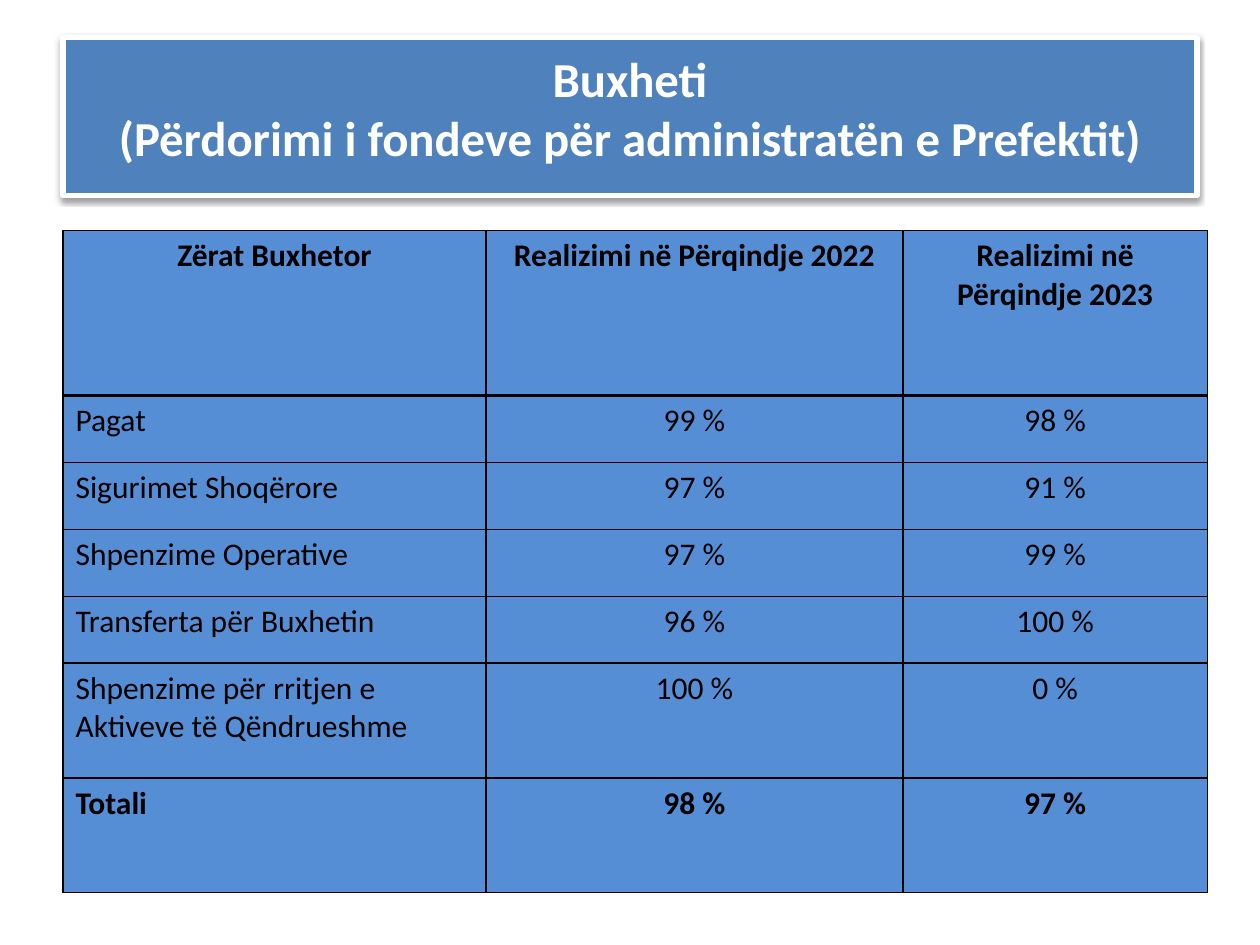
from dataclasses import dataclass

from lxml import etree
from pptx import Presentation
from pptx.dml.color import RGBColor
from pptx.enum.shapes import MSO_SHAPE
from pptx.enum.text import MSO_ANCHOR, PP_ALIGN
from pptx.oxml.ns import qn
from pptx.util import Cm, Pt

RECTANGLE = MSO_SHAPE.RECTANGLE
MIDDLE = MSO_ANCHOR.MIDDLE
LEFT, CENTER = PP_ALIGN.LEFT, PP_ALIGN.CENTER

FONT = "Calibri"
COLORS = {
    "title": "4F81BD",
    "cell": "558ED5",
    "white": "FFFFFF",
    "black": "000000",
}
TITLE_LINES = ("Buxheti", "(Përdorimi i fondeve për administratën e Prefektit)")
COLUMN_WIDTHS = (8.53, 8.4, 6.14)


@dataclass
class BudgetRow:
    item: str
    year_2022: str
    year_2023: str
    height: float = 1.35
    bold: bool = False
    header: bool = False


ROWS = [
    BudgetRow("Zërat Buxhetor", "Realizimi në Përqindje 2022",
              "Realizimi në Përqindje 2023", 3.32, True, True),
    BudgetRow("Pagat", "99 %", "98 %"),
    BudgetRow("Sigurimet Shoqërore", "97 %", "91 %"),
    BudgetRow("Shpenzime Operative", "97 %", "99 %"),
    BudgetRow("Transferta për Buxhetin", "96 %", "100 %"),
    BudgetRow("Shpenzime për rritjen e Aktiveve të Qëndrueshme", "100 %", "0 %", 2.31),
    BudgetRow("Totali", "98 %", "97 %", 2.31, True),
]


def rgb(name: str) -> RGBColor:
    return RGBColor.from_string(COLORS[name])


def format_paragraph(p, size: float, color: str, bold: bool, align) -> None:
    p.alignment = align
    for r in p.runs:
        r.font.name = FONT
        r.font.size = Pt(size)
        r.font.bold = bold
        r.font.color.rgb = rgb(color)


def add_color(parent, color: str):
    return etree.SubElement(parent, qn("a:srgbClr"), val=COLORS[color])


def add_shadow(sp) -> None:
    sp.shadow.inherit = False
    effects = sp._element.spPr.find(qn("a:effectLst"))
    shadow = etree.SubElement(
        effects, qn("a:outerShdw"), blurRad=str(Pt(3.1)), dist=str(Pt(1.6)),
        dir=str(90 * 60000), rotWithShape="0")
    etree.SubElement(add_color(shadow, "black"), qn("a:alpha"), val="38000")


def add_title(s) -> None:
    sp = s.shapes.add_shape(RECTANGLE, Cm(1.27), Cm(0.76), Cm(22.86), Cm(3.18))
    sp.fill.solid()
    sp.fill.fore_color.rgb = rgb("title")
    sp.line.color.rgb = rgb("white")
    sp.line.width = Pt(3)
    add_shadow(sp)
    tf = sp.text_frame
    tf.word_wrap = True
    tf.vertical_anchor = MIDDLE
    tf.margin_bottom = Cm(0.48)
    tf.text = "\n".join(TITLE_LINES)
    for p in tf.paragraphs:
        format_paragraph(p, 27.9, "white", True, CENTER)


def add_border(cell, side: str, width: float) -> None:
    line = etree.SubElement(cell._tc.get_or_add_tcPr(), qn(f"a:ln{side}"), w=str(Pt(width)))
    add_color(etree.SubElement(line, qn("a:solidFill")), "black")


def fill_cell(cell, text: str, row: BudgetRow, align, top: float) -> None:
    widths = {"L": 1, "R": 1, "T": top, "B": 2 if row.header else 1}
    for side, width in widths.items():
        add_border(cell, side, width)
    cell.fill.solid()
    cell.fill.fore_color.rgb = rgb("cell")
    cell.text_frame.text = text
    format_paragraph(cell.text_frame.paragraphs[0], 18, "black", row.bold, align)


def add_budget_table(s) -> None:
    table = s.shapes.add_table(
        len(ROWS), len(COLUMN_WIDTHS), Cm(1.27), Cm(4.65),
        Cm(sum(COLUMN_WIDTHS)), Cm(sum(row.height for row in ROWS))).table
    for column, width in zip(table.columns, COLUMN_WIDTHS):
        column.width = Cm(width)
    for i, row in enumerate(ROWS):
        table.rows[i].height = Cm(row.height)
        top = 2 if i and ROWS[i - 1].header else 1
        for j, text in enumerate((row.item, row.year_2022, row.year_2023)):
            align = CENTER if row.header or j else LEFT
            fill_cell(table.cell(i, j), text, row, align, top)


def main() -> None:
    prs = Presentation()
    prs.slide_width, prs.slide_height = Cm(25.4), Cm(19.05)
    s = prs.slides.add_slide(prs.slide_layouts[6])
    add_title(s)
    add_budget_table(s)
    prs.save("out.pptx")


if __name__ == "__main__":
    main()
